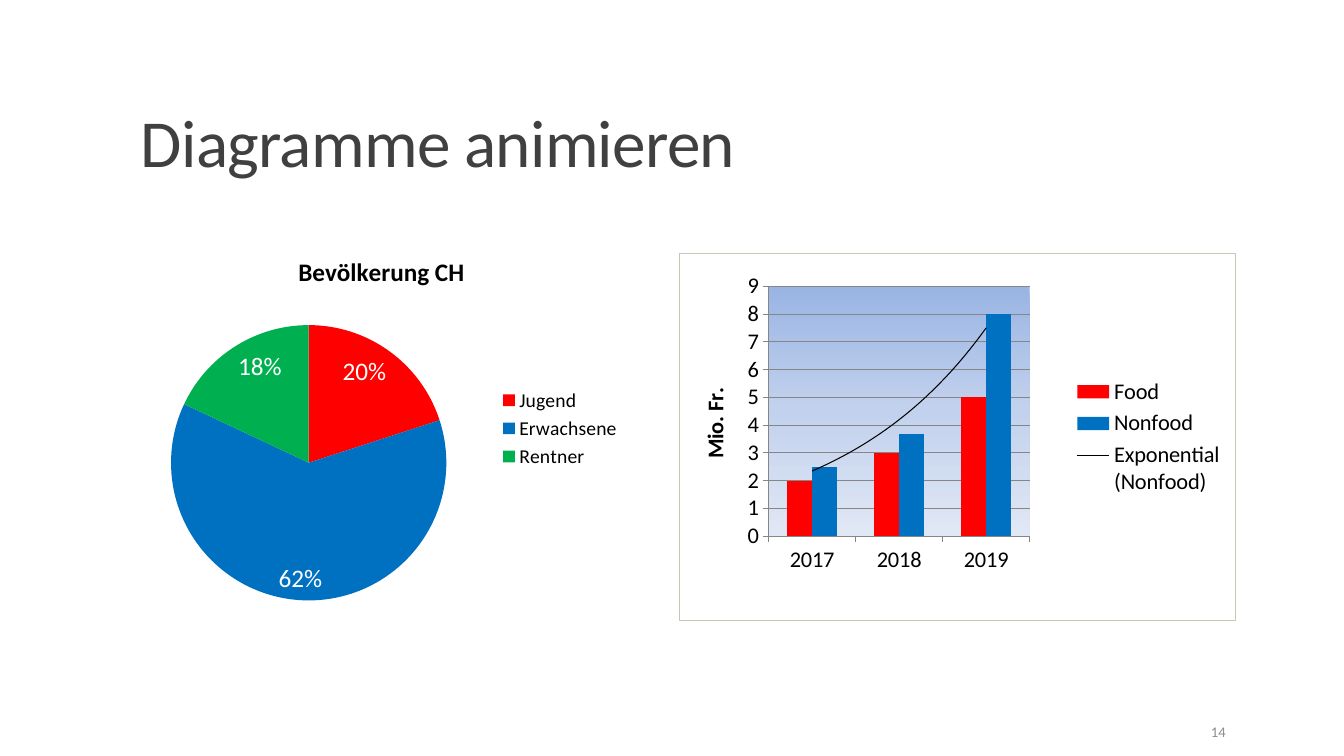
from lxml.etree import SubElement
from pptx import Presentation
from pptx.chart.data import CategoryChartData
from pptx.dml.color import RGBColor
from pptx.enum.chart import XL_CHART_TYPE, XL_LABEL_POSITION, XL_LEGEND_POSITION, XL_TICK_MARK
from pptx.enum.text import MSO_ANCHOR, PP_ALIGN
from pptx.oxml import parse_xml
from pptx.oxml.ns import nsdecls, qn
from pptx.util import Cm, Pt

COLORS = {
    "title": "404040",
    "number": "8C8C8C",
    "text": "000000",
    "label": "FFFFFF",
    "red": "FF0000",
    "blue": "0070C0",
    "green": "00B050",
    "grid": "868686",
    "border": "C1CAB6",
}
PLOT_GRADIENT = {0: "9AB5E4", 50: "C2D1ED", 100: "E1E8F5"}
FONT = "Calibri"


def color(name):
    return RGBColor.from_string(COLORS[name])


def apply_format(target, values):
    for name, value in values.items():
        setattr(target, name, value)


def format_font(font, size, color_name, bold=False):
    apply_format(font, {"name": FONT, "size": Pt(size), "bold": bold})
    font.color.rgb = color(color_name)


def format_line(line, color_name, width):
    line.color.rgb = color(color_name)
    line.width = Pt(width)


def fill_solid(fill, color_name):
    fill.solid()
    fill.fore_color.rgb = color(color_name)


def add_text(slide, box, text, size, color_name, anchor, paragraph_format):
    shape = slide.shapes.add_textbox(*map(Cm, box))
    apply_format(shape.text_frame, {"word_wrap": True, "vertical_anchor": anchor})
    paragraph = shape.text_frame.paragraphs[0]
    apply_format(paragraph, paragraph_format)
    run = paragraph.add_run()
    run.text = text
    format_font(run.font, size, color_name)
    return run


def add_title(slide, box):
    run = add_text(slide, box, "Diagramme animieren", 48, "title",
                   MSO_ANCHOR.BOTTOM, {"line_spacing": 0.85})
    run.font._element.set("spc", "-50")


def add_slide_number(slide, box):
    add_text(slide, box, "14", 10.5, "number", MSO_ANCHOR.MIDDLE,
             {"alignment": PP_ALIGN.RIGHT})


def set_plot_layout(chart, bounds):
    plot_area = chart._chartSpace.find(".//" + qn("c:plotArea"))
    for layout in plot_area.findall(qn("c:layout")):
        plot_area.remove(layout)
    layout = parse_xml(f"<c:layout {nsdecls('c')}/>")
    manual = SubElement(layout, qn("c:manualLayout"))
    settings = {"layoutTarget": "inner", "xMode": "edge", "yMode": "edge"}
    settings.update(zip("xywh", bounds))
    for name, value in settings.items():
        SubElement(manual, qn(f"c:{name}")).set("val", str(value))
    plot_area.insert(0, layout)
    return plot_area


def add_chart(slide, box, chart_type, categories, series, font_size, legend_size):
    data = CategoryChartData()
    data.categories = categories
    for name, values in series.items():
        data.add_series(name, values)
    chart = slide.shapes.add_chart(chart_type, *map(Cm, box), data).chart
    format_font(chart.font, font_size, "text")
    chart.has_legend = True
    apply_format(chart.legend, {"position": XL_LEGEND_POSITION.RIGHT,
                                "include_in_layout": False})
    format_font(chart.legend.font, legend_size, "text")
    return chart


def set_title(owner, title, text, size):
    title.text_frame.text = text
    format_font(title.text_frame.paragraphs[0].runs[0].font, size, "text", True)


def add_population_pie(slide, box):
    chart = add_chart(slide, box, XL_CHART_TYPE.PIE,
                      ["Jugend", "Erwachsene", "Rentner"],
                      {"Series 1": [20, 62, 18]}, 18, 14)
    chart.has_title = True
    set_title(chart, chart.chart_title, "Bevölkerung CH", 18)
    plot = chart.plots[0]
    plot.vary_by_categories = True
    for index, name in enumerate(["red", "blue", "green"]):
        fill_solid(plot.series[0].points[index].format.fill, name)
    plot.has_data_labels = True
    apply_format(plot.data_labels, {
        "show_percentage": True,
        "show_value": False,
        "number_format": "0%",
        "number_format_is_linked": False,
        "position": XL_LABEL_POSITION.INSIDE_END,
    })
    format_font(plot.data_labels.font, 18, "label")
    set_plot_layout(chart, (0.08, 0.23, 0.55, 0.72))


def add_trend_line(series):
    trend = parse_xml(
        f"<c:trendline {nsdecls('c', 'a')}><c:spPr><a:ln w='9525'><a:solidFill>"
        f"<a:srgbClr val='{COLORS['text']}'/></a:solidFill></a:ln></c:spPr>"
        "<c:trendlineType val='exp'/><c:dispRSqr val='0'/><c:dispEq val='0'/>"
        "</c:trendline>")
    series._element.find(qn("c:cat")).addprevious(trend)


def add_sales_columns(slide, box):
    chart = add_chart(slide, box, XL_CHART_TYPE.COLUMN_CLUSTERED,
                      ["2017", "2018", "2019"],
                      {"Food": [2, 3, 5], "Nonfood": [2.5, 3.7, 8]}, 16, 16)
    chart.has_title = False
    plot = chart.plots[0]
    apply_format(plot, {"gap_width": 150, "overlap": 0, "vary_by_categories": False})
    for series, name in zip(plot.series, ["red", "blue"]):
        fill_solid(series.format.fill, name)
    add_trend_line(plot.series[1])

    value_axis = chart.value_axis
    apply_format(value_axis, {"minimum_scale": 0, "maximum_scale": 9, "major_unit": 1,
                              "has_major_gridlines": True, "has_title": True})
    set_title(value_axis, value_axis.axis_title, "Mio. Fr.", 16)
    format_line(value_axis.major_gridlines.format.line, "grid", 0.75)
    for axis in (chart.category_axis, value_axis):
        axis.major_tick_mark = XL_TICK_MARK.OUTSIDE
        format_line(axis.format.line, "grid", 0.75)
        format_font(axis.tick_labels.font, 16, "text")

    plot_area = set_plot_layout(chart, (0.16, 0.09, 0.47, 0.68))
    stops = "".join(f"<a:gs pos='{position * 1000}'><a:srgbClr val='{value}'/></a:gs>"
                    for position, value in PLOT_GRADIENT.items())
    plot_area.append(parse_xml(
        f"<c:spPr {nsdecls('c', 'a')}><a:gradFill><a:gsLst>{stops}</a:gsLst>"
        "<a:lin ang='5400000' scaled='0'/></a:gradFill></c:spPr>"))
    chart._chartSpace.find(qn("c:chart")).addnext(parse_xml(
        f"<c:spPr {nsdecls('c', 'a')}><a:noFill/><a:ln w='6350'><a:solidFill>"
        f"<a:srgbClr val='{COLORS['border']}'/></a:solidFill></a:ln></c:spPr>"))


def main():
    presentation = Presentation()
    apply_format(presentation, {"slide_width": Cm(33.87), "slide_height": Cm(19.05)})
    slide = presentation.slides.add_slide(presentation.slide_layouts[6])
    add_title(slide, (3.3, 1.5, 27.84, 3.18))
    add_population_pie(slide, (3.3, 5.97, 12.62, 9.65))
    add_slide_number(slide, (27.51, 17.93, 3.63, 1.02))
    add_sales_columns(slide, (17.12, 6.38, 14.02, 9.27))
    presentation.save("out.pptx")


if __name__ == "__main__":
    main()
